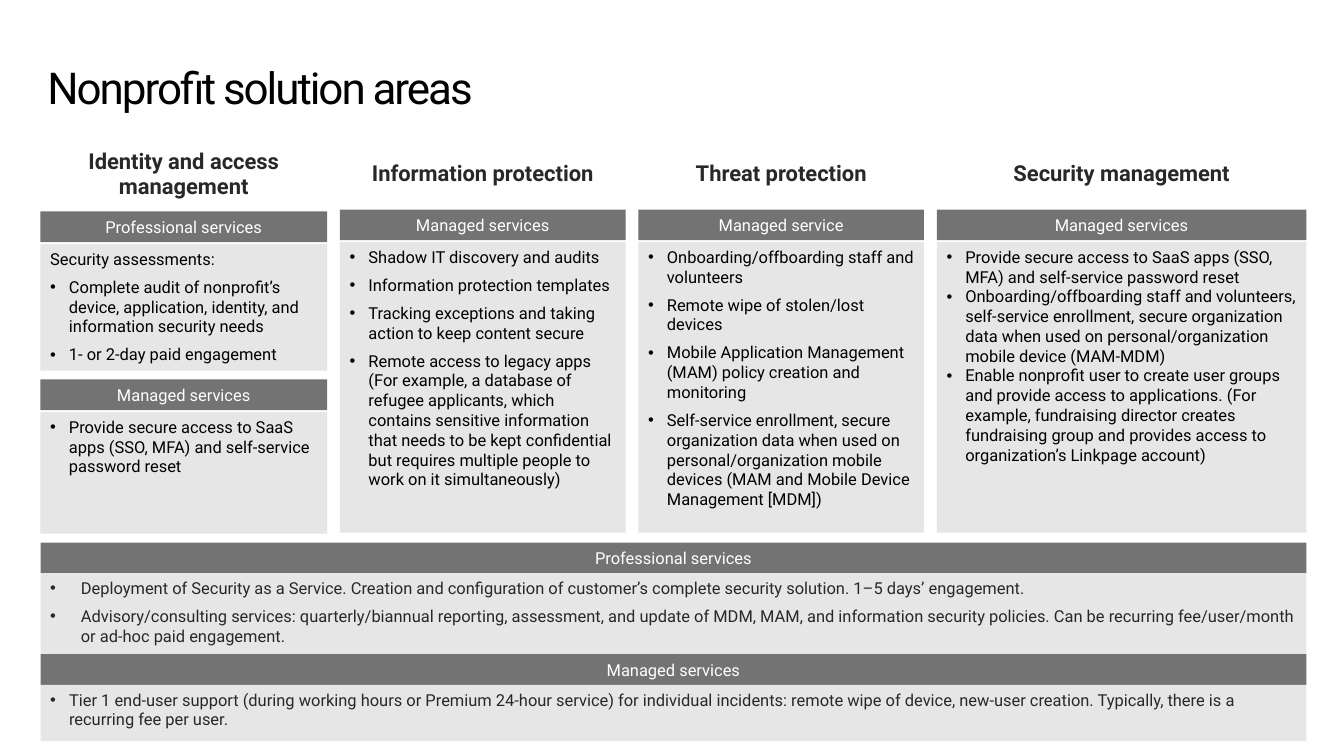
from pptx import Presentation
from pptx.dml.color import RGBColor
from pptx.enum.shapes import MSO_SHAPE
from pptx.enum.text import MSO_ANCHOR, PP_ALIGN
from pptx.oxml.ns import qn
from pptx.util import Pt
from lxml.etree import SubElement

PX = 9144  # EMU in one px, 100 px to the inch
BLACK = RGBColor(0x00, 0x00, 0x00)
INK = RGBColor(0x28, 0x28, 0x28)
WHITE = RGBColor(0xFF, 0xFF, 0xFF)
BAR = RGBColor(0x73, 0x73, 0x73)
PANEL = RGBColor(0xE6, 0xE6, 0xE6)

# Content
TITLE = "Nonprofit solution areas"

# Columns: heading, width, panels of (bar top, bar label, body height, space after, intro, bullets)
COLUMNS = [
    ("Identity and access management", 290, [
        (214, "Professional services", 128, 6, ["Security assessments:"], [
            "Complete audit of nonprofit’s device, application, identity, and information security needs",
            "1- or 2-day paid engagement"]),
        (384, "Managed services", 123, 0, [], [
            "Provide secure access to SaaS apps (SSO, MFA) and self-service password reset"]),
    ]),
    ("Information protection", 289, [
        (212, "Managed services", 294, 6, [], [
            "Shadow IT discovery and audits",
            "Information protection templates",
            "Tracking exceptions and taking action to keep content secure",
            "Remote access to legacy apps (For example, a database of refugee applicants, which "
            "contains sensitive information that needs to be kept confidential but requires "
            "multiple people to work on it simultaneously)"]),
    ]),
    ("Threat protection", 289, [
        (212, "Managed service", 294, 6, [], [
            "Onboarding/offboarding staff and volunteers",
            "Remote wipe of stolen/lost devices",
            "Mobile Application Management (MAM) policy creation and monitoring",
            "Self-service enrollment, secure organization data when used on personal/organization "
            "mobile devices (MAM and Mobile Device Management [MDM])"]),
    ]),
    ("Security management", 374, [
        (212, "Managed services", 294, 0, [], [
            "Provide secure access to SaaS apps (SSO, MFA) and self-service password reset",
            "Onboarding/offboarding staff and volunteers, self-service enrollment, secure "
            "organization data when used on personal/organization mobile device (MAM-MDM)",
            "Enable nonprofit user to create user groups and provide access to applications. "
            "(For example, fundraising director creates fundraising group and provides access "
            "to organization’s Linkpage account)"]),
    ]),
]

# Full-width bands: label, body height, bullet indent, bullets
BANDS = [
    ("Professional services", 82, 31, [
        "Deployment of Security as a Service. Creation and configuration of customer’s complete "
        "security solution. 1–5 days’ engagement.",
        "Advisory/consulting services: quarterly/biannual reporting, assessment, and update of "
        "MDM, MAM, and information security policies. Can be recurring fee/user/month or ad-hoc "
        "paid engagement."]),
    ("Managed services", 57, 19, [
        "Tier 1 end-user support (during working hours or Premium 24-hour service) for individual "
        "incidents: remote wipe of device, new-user creation. Typically, there is a recurring fee "
        "per user."]),
]

# Layout
LEFT, COL_GAP = 41, 13
HEAD_Y, HEAD_H = 149, 55
BAR_H, BAR_GAP = 31, 2
BAND_Y = 549
INDENT = 19

prs = Presentation()
prs.slide_width, prs.slide_height = 1360 * PX, 765 * PX
s = prs.slides.add_slide(prs.slide_layouts[6])


def style(p, size, color, bold=False):
    for r in p.runs:
        r.font.name, r.font.size, r.font.bold = "Roboto", Pt(size), bold
        r.font.color.rgb = color


def text_box(x, y, w, h, text):
    tf = s.shapes.add_textbox(x * PX, y * PX, w * PX, h * PX).text_frame
    tf.word_wrap = True
    tf.text = text
    return tf


def rect(x, y, w, h, fill, anchor):
    sp = s.shapes.add_shape(MSO_SHAPE.RECTANGLE, x * PX, y * PX, w * PX, h * PX)
    sp.shadow.inherit = False
    sp.fill.solid()
    sp.fill.fore_color.rgb = fill
    sp.line.fill.background()
    tf = sp.text_frame
    tf.word_wrap = True
    tf.vertical_anchor = anchor
    return tf


def bar(x, y, w, label):
    tf = rect(x, y, w, BAR_H, BAR, MSO_ANCHOR.MIDDLE)
    tf.text = label
    p = tf.paragraphs[0]
    p.alignment = PP_ALIGN.CENTER
    style(p, 12, WHITE)


def body(x, y, w, h, intro, bullets, indent, after, color):
    tf = rect(x, y, w, h, PANEL, MSO_ANCHOR.TOP)
    tf.text = "\n".join(intro + bullets)
    for i, p in enumerate(tf.paragraphs):
        p.alignment = PP_ALIGN.LEFT
        p.space_after = Pt(after)
        if i >= len(intro):
            pPr = p._p.get_or_add_pPr()
            pPr.set("marL", str(indent * PX))
            pPr.set("indent", str(-indent * PX))
            SubElement(pPr, qn("a:buFont"), typeface="Arial")
            SubElement(pPr, qn("a:buChar"), char="•")
        style(p, 12, color)


# Title
tf = text_box(48, 49, 620, 85, TITLE)
tf.margin_left = tf.margin_right = tf.margin_bottom = 0
tf.margin_top = 18 * PX
p = tf.paragraphs[0]
p.line_spacing = 0.9
style(p, 32, BLACK)
p.runs[0]._r.get_or_add_rPr().set("spc", "-150")

# Columns
x = LEFT
for heading, w, panels in COLUMNS:
    tf = text_box(x, HEAD_Y, w, HEAD_H, heading)
    tf.vertical_anchor = MSO_ANCHOR.MIDDLE
    p = tf.paragraphs[0]
    p.alignment = PP_ALIGN.CENTER
    p.line_spacing = 0.95
    style(p, 16, INK, bold=True)
    for y, label, h, after, intro, bullets in panels:
        bar(x, y, w, label)
        body(x, y + BAR_H + BAR_GAP, w, h, intro, bullets, INDENT, after, BLACK)
    x += w + COL_GAP

# Bands under the columns
band_w = x - COL_GAP - LEFT
y = BAND_Y
for label, h, indent, bullets in BANDS:
    bar(LEFT, y, band_w, label)
    body(LEFT, y + BAR_H, band_w, h, [], bullets, indent, 6, INK)
    y += BAR_H + h

prs.save("out.pptx")
